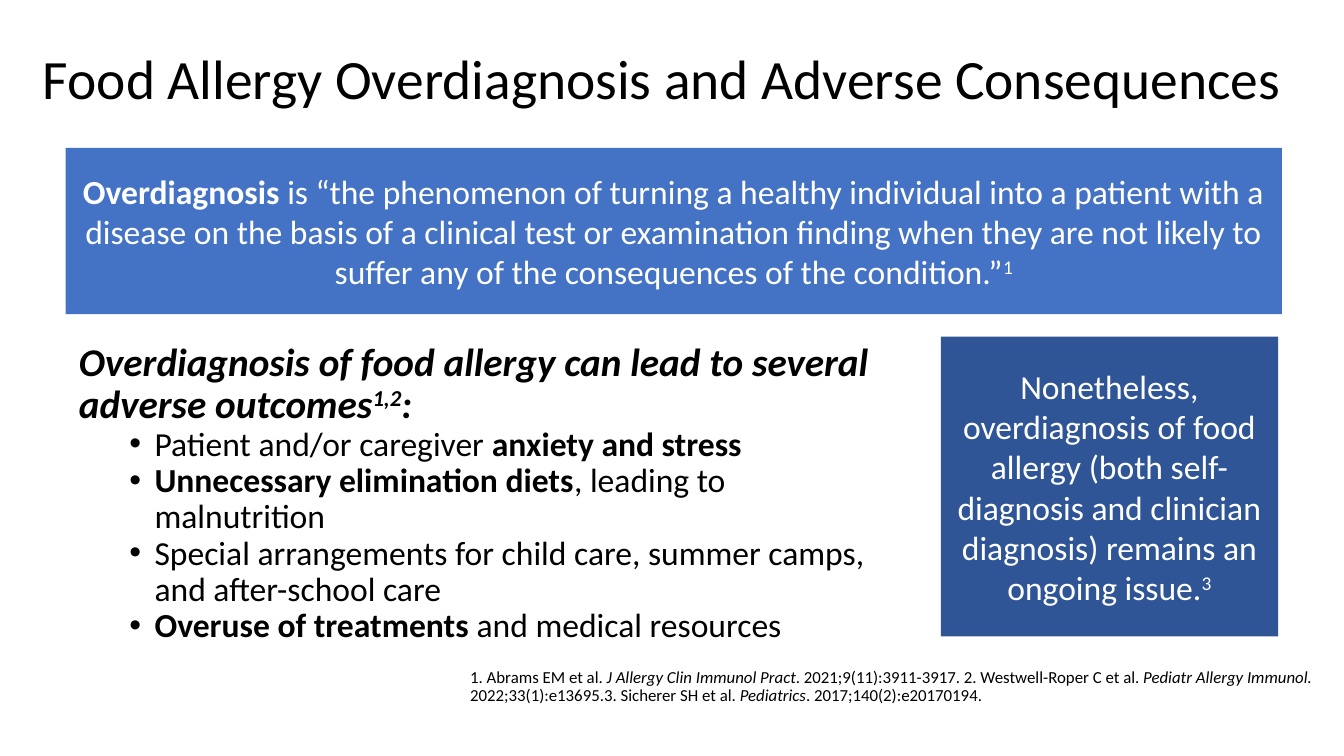
from lxml import etree
from pptx import Presentation
from pptx.dml.color import RGBColor
from pptx.enum import shapes, text
from pptx.oxml import ns
from pptx.util import Pt

FONT = "Calibri"
BLACK = RGBColor(0x00, 0x00, 0x00)
WHITE = RGBColor(0xFF, 0xFF, 0xFF)
BLUE = RGBColor(0x44, 0x72, 0xC4)
DARK_BLUE = RGBColor(0x2F, 0x55, 0x97)

# Each run is (wording, style): b bold, i italic, s superscript
DEFINITION = [
    ("Overdiagnosis ", "b"),
    ("is “the phenomenon of turning a healthy individual into a patient with a "
     "disease on the basis of a clinical test or examination finding when they "
     "are not likely to suffer any of the consequences of the condition.”", ""),
    ("1", "s"),
]
LEAD_IN = [
    ("Overdiagnosis of food allergy can lead to several adverse outcomes", "bi"),
    ("1,2", "bis"),
    (":", "bi"),
]
OUTCOMES = [
    [("Patient and/or caregiver ", ""), ("anxiety and stress", "b")],
    [("Unnecessary elimination diets", "b"), (", leading to malnutrition", "")],
    [("Special arrangements for child care, summer camps, and after-school care", "")],
    [("Overuse of treatments ", "b"), ("and medical resources", "")],
]
ONGOING_ISSUE = [
    ("Nonetheless, overdiagnosis of food allergy (both self-diagnosis and "
     "clinician diagnosis) remains an ongoing issue.", ""),
    ("3", "s"),
]
REFERENCES = [
    ("1. Abrams EM et al. ", ""),
    ("J Allergy Clin Immunol Pract", "i"),
    (". 2021;9(11):3911-3917. 2. Westwell-Roper C et al. ", ""),
    ("Pediatr Allergy Immunol.", "i"),
    (" 2022;33(1):e13695.3. Sicherer SH et al. ", ""),
    ("Pediatrics", "i"),
    (". 2017;140(2):e20170194.", ""),
]


def add_runs(paragraph, runs, size, color):
    for wording, style in runs:
        run = paragraph.add_run()
        run.text = wording
        font = run.font
        font.name, font.size = FONT, Pt(size)
        font.bold, font.italic = "b" in style, "i" in style
        font.color.rgb = color
        if "s" in style:
            run._r.get_or_add_rPr().set("baseline", "30000")


def add_bullet(paragraph, left, hanging):
    properties = paragraph._p.get_or_add_pPr()
    properties.set("marL", str(Pt(left)))
    properties.set("indent", str(-Pt(hanging)))
    etree.SubElement(properties, ns.qn("a:buFont")).set("typeface", "Arial")
    etree.SubElement(properties, ns.qn("a:buChar")).set("char", "•")


def place_title(slide, left, top, width, height):
    title = slide.shapes.title
    title.left, title.top = Pt(left), Pt(top)
    title.width, title.height = Pt(width), Pt(height)
    frame = title.text_frame
    frame.word_wrap = True
    frame.auto_size = text.MSO_AUTO_SIZE.NONE
    frame.vertical_anchor = text.MSO_ANCHOR.MIDDLE
    heading = frame.paragraphs[0]
    heading.alignment = text.PP_ALIGN.LEFT
    heading.line_spacing = 0.9
    add_runs(heading, [("Food Allergy Overdiagnosis and Adverse Consequences", "")],
             29.7, BLACK)


def add_callout(slide, left, top, width, height, fill, runs):
    callout = slide.shapes.add_shape(shapes.MSO_SHAPE.RECTANGLE,
                                     Pt(left), Pt(top), Pt(width), Pt(height))
    callout.shadow.inherit = False
    callout.fill.solid()
    callout.fill.fore_color.rgb = fill
    callout.line.fill.background()
    frame = callout.text_frame
    frame.word_wrap = True
    frame.vertical_anchor = text.MSO_ANCHOR.MIDDLE
    statement = frame.paragraphs[0]
    statement.alignment = text.PP_ALIGN.CENTER
    add_runs(statement, runs, 18, WHITE)


def add_text(slide, left, top, width, height, runs, size):
    """Add a wrapped text box with one paragraph and return its frame."""
    box = slide.shapes.add_textbox(Pt(left), Pt(top), Pt(width), Pt(height))
    frame = box.text_frame
    frame.word_wrap = True
    frame.paragraphs[0].line_spacing = 0.9
    add_runs(frame.paragraphs[0], runs, size, BLACK)
    return frame


def add_outcomes(slide, left, top, width, height):
    frame = add_text(slide, left, top, width, height, LEAD_IN, 21)
    for outcome in OUTCOMES:
        item = frame.add_paragraph()
        item.level = 1
        item.line_spacing = 0.9
        add_bullet(item, 40.5, 13.5)
        add_runs(item, outcome, 18, BLACK)


def main():
    deck = Presentation()
    deck.slide_width, deck.slide_height = Pt(720), Pt(405)
    slide = deck.slides.add_slide(deck.slide_layouts[5])

    place_title(slide, 15.8, 10, 690, 67.7)
    add_outcomes(slide, 35.2, 180, 450, 153.4)
    add_text(slide, 244.8, 355, 475.2, 43.2, REFERENCES, 9)
    add_callout(slide, 35.2, 79.3, 651.6, 89, BLUE, DEFINITION)
    add_callout(slide, 504, 180.3, 180.7, 160.6, DARK_BLUE, ONGOING_ISSUE)

    deck.save("out.pptx")


if __name__ == "__main__":
    main()
